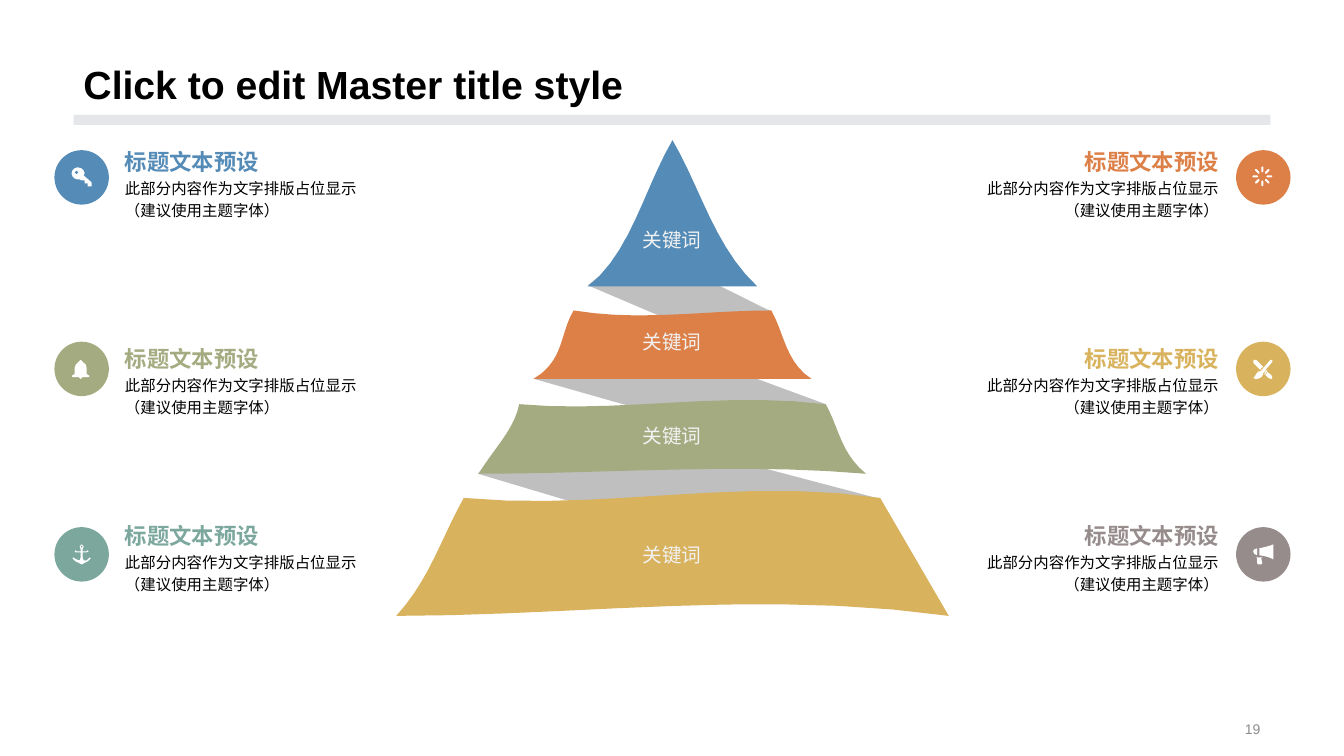
from pptx import Presentation
from pptx.dml.color import RGBColor
from pptx.enum.shapes import MSO_SHAPE as SHAPE
from pptx.enum.text import MSO_ANCHOR as ANCHOR, PP_ALIGN as ALIGN
from pptx.util import Pt
from math import ceil, cos, dist, radians, sin

PX = 9144
WHITE = RGBColor(0xFF, 0xFF, 0xFF)
BLACK = RGBColor(0x00, 0x00, 0x00)
BAR = RGBColor(0xE4, 0xE6, 0xEA)
NUMBER = RGBColor(0x8C, 0x8C, 0x8C)
KEYWORD = RGBColor(0xF2, 0xF2, 0xF2)
RIBBON = RGBColor(0xBF, 0xBF, 0xBF)
BLUE = RGBColor(0x54, 0x8B, 0xB7)
ORANGE = RGBColor(0xDD, 0x80, 0x47)
GREEN = RGBColor(0xA5, 0xAB, 0x81)
GOLD = RGBColor(0xD8, 0xB2, 0x5C)
TEAL = RGBColor(0x7B, 0xA7, 0x9D)
GREY = RGBColor(0x96, 0x8C, 0x8C)

BANDS = [
    (RIBBON, [(801, 376), (583, 283), (601, 270, 612, 258, 620, 237), (765, 309),
              (778, 331, 777, 354, 801, 376)]),
    (BLUE, [(667, 139), (695, 187, 709, 245, 751, 284), (583, 284),
            (625, 252, 639, 187, 667, 139)]),
    (RIBBON, [(857, 469), (530, 376), (560, 360, 556, 331, 569, 309), (819, 401),
              (831, 424, 834, 452, 857, 469)]),
    (ORANGE, [(569, 308), (635, 319, 699, 308, 765, 308),
              (778, 331, 779, 359, 805, 376), (529, 376),
              (560, 358, 555, 331, 569, 308)]),
    (RIBBON, [(939, 609), (474, 470), (491, 447, 513, 430, 517, 401), (873, 495)]),
    (GREEN, [(515, 401), (615, 410, 712, 388, 819, 401),
             (832, 424, 834, 450, 859, 470), (732, 459, 603, 470, 475, 470),
             (488, 447, 510, 427, 515, 401)]),
    (GOLD, [(460, 494), (598, 507, 733, 473, 873, 494), (941, 611),
            (755, 585, 575, 611, 393, 611), (426, 575, 438, 533, 460, 494)]),
]
KEYWORD_TOPS = [533, 415, 322, 221]

KEY = [
    [(29, 25), (30, 23), (30, 20, 27, 17, 23, 17), (20, 17, 17, 20, 17, 23),
     (17, 26, 20, 29, 23, 29), (25, 29), (27, 30), (30, 30), (30, 33), (33, 33),
     (33, 36), (37, 36), (37, 32)],
    [(22, 24), (20, 22), (22, 20), (24, 22)],
]
BELL = [
    [(32, 32), (32, 26), (32, 24, 31, 21, 28, 20), (26, 18), (24, 20),
     (22, 21, 20, 24, 20, 26), (20, 32), (17, 34), (18, 35), (24, 35),
     (24, 36, 25, 37, 26, 37), (27, 37, 28, 36, 28, 35), (34, 35), (35, 34)],
]
ANCHOR_ICON = [
    [(35, 30), (34, 31), (32, 33), (29, 33), (28, 30), (28, 25), (32, 25), (34, 24),
     (33, 23), (32, 24), (28, 24), (28, 22), (29, 19), (27, 17), (25, 19), (26, 22),
     (26, 24), (22, 24), (21, 23), (20, 24), (21, 25), (26, 25), (26, 30), (25, 33),
     (22, 32), (20, 31), (19, 30), (18, 31), (19, 32), (21, 34), (25, 36), (27, 37),
     (29, 36), (33, 34), (35, 32), (36, 31)],
    [(26, 19), (27, 18), (28, 19), (27, 21)],
]
TOOLS = [
    [(35, 33), (31, 30), (29, 33), (32, 36), (35, 37), (36, 36)],
    [(30, 28), (29, 30), (28, 32), (28, 33), (31, 29)],
    [(24, 28), (25, 26), (27, 25), (20, 18), (17, 18), (17, 21)],
    [(25, 29), (23, 29, 20, 30, 20, 32), (19, 36, 17, 35, 17, 35), (19, 37),
     (22, 37, 26, 36, 27, 32), (25, 29)],
    [(29, 28), (36, 20), (36, 18), (34, 18), (27, 26), (25, 28), (25, 29), (27, 31),
     (29, 29)],
]
MEGAPHONE = [
    [(20, 30), (21, 31), (21, 36), (22, 37), (25, 37), (26, 36), (25, 31), (26, 30)],
    [(23, 28), (28, 28, 36, 31, 37, 32), (37, 17), (36, 18, 28, 20, 23, 21)],
    [(21, 28), (21, 21), (18, 21, 17, 23, 17, 24), (17, 26, 18, 27, 21, 28)],
]


def ray(angle):
    c, s = cos(radians(angle)), sin(radians(angle))
    corners = [(4, 0), (5, -1), (9, -1), (10, 0), (9, 1), (5, 1)]
    return [(26 + u * c - v * s, 26 + u * s + v * c) for u, v in corners]


SPINNER = [ray(angle) for angle in range(0, 360, 45)]

ROWS = [(149, 147), (339, 342), (523, 518)]
LEFT = [(BLUE, KEY), (GREEN, BELL), (TEAL, ANCHOR_ICON)]
RIGHT = [(ORANGE, SPINNER), (GOLD, TOOLS), (GREY, MEGAPHONE)]


def flatten(contour):
    pts = [contour[0]]
    for seg in contour[1:]:
        if len(seg) == 2:
            pts.append(seg)
            continue
        x0, y0 = pts[-1]
        x1, y1, x2, y2, x3, y3 = seg
        steps = min(10, ceil(dist((x0, y0), (x3, y3)) / 4))
        for i in range(1, steps + 1):
            t = i / steps
            a, b, c, d = (1 - t) ** 3, 3 * t * (1 - t) ** 2, 3 * t * t * (1 - t), t ** 3
            pts.append((a * x0 + b * x1 + c * x2 + d * x3,
                        a * y0 + b * y1 + c * y2 + d * y3))
    return pts


class Canvas:
    font = "Arial"

    def __init__(self, slide):
        self.shapes = slide.shapes

    def paint(self, s, fill):
        s.shadow.inherit = False
        s.fill.solid()
        s.fill.fore_color.rgb = fill
        s.line.fill.background()

    def shape(self, kind, x, y, w, h, fill):
        box = [v * PX for v in (x, y, w, h)]
        self.paint(self.shapes.add_shape(kind, *box), fill)

    def outline(self, contours, fill, x=0, y=0):
        fb = None
        for contour in contours:
            pts = [((x + px) * PX, (y + py) * PX) for px, py in flatten(contour)]
            if fb is None:
                fb = self.shapes.build_freeform(*pts[0])
            else:
                fb.move_to(*pts[0])
            fb.add_line_segments(pts[1:], close=True)
        self.paint(fb.convert_to_shape(), fill)

    def text(self, text, x, y, w, h, size, color, bold=False, align=ALIGN.LEFT,
             anchor=ANCHOR.TOP, wrap=True, spacing=None, inset=None):
        tf = self.shapes.add_textbox(*[v * PX for v in (x, y, w, h)]).text_frame
        tf.word_wrap = wrap
        tf.vertical_anchor = anchor
        if inset is not None:
            tf.margin_left = tf.margin_right = inset * PX
            tf.margin_top = tf.margin_bottom = 0
        p = tf.paragraphs[0]
        p.text = text
        p.alignment = align
        p.line_spacing = spacing
        p.font.name, p.font.size, p.font.bold = self.font, Pt(size), bold
        p.font.color.rgb = color

    def badge(self, x, y, color, icon):
        self.shape(SHAPE.OVAL, x, y, 54, 54, color)
        self.outline(icon, WHITE, x, y)

    def caption(self, x, y, color, align):
        self.text("标题文本预设", x, y, 283, 27, 16, color, bold=True, align=align,
                  wrap=False, inset=16)
        self.text("此部分内容作为文字排版占位显示\n（建议使用主题字体）", x, y + 27, 283, 59,
                  11, BLACK, align=align, spacing=1.2, inset=16)


def main():
    prs = Presentation()
    prs.slide_width, prs.slide_height = 1333 * PX, 750 * PX
    c = Canvas(prs.slides.add_slide(prs.slide_layouts[6]))
    c.shape(SHAPE.RECTANGLE, 73, 114, 1187, 10, BAR)
    c.text("Click to edit Master title style", 73, 0, 1187, 112, 28, BLACK, bold=True,
           anchor=ANCHOR.BOTTOM, spacing=0.9)
    c.text("19", 942, 712, 318, 23, 10, NUMBER, align=ALIGN.RIGHT, anchor=ANCHOR.MIDDLE)
    for color, contour in BANDS:
        c.outline([contour], color)
    for top in KEYWORD_TOPS:
        c.text("关键词", 627, top, 79, 34, 14, KEYWORD, align=ALIGN.CENTER,
               anchor=ANCHOR.MIDDLE, wrap=False)
    for items, badge_x, text_x, align in ((LEFT, 54, 108, ALIGN.LEFT),
                                          (RIGHT, 1226, 942, ALIGN.RIGHT)):
        for (color, icon), (badge_y, text_y) in zip(items, ROWS):
            c.badge(badge_x, badge_y, color, icon)
            c.caption(text_x, text_y, color, align)
    prs.save("out.pptx")


if __name__ == "__main__":
    main()
